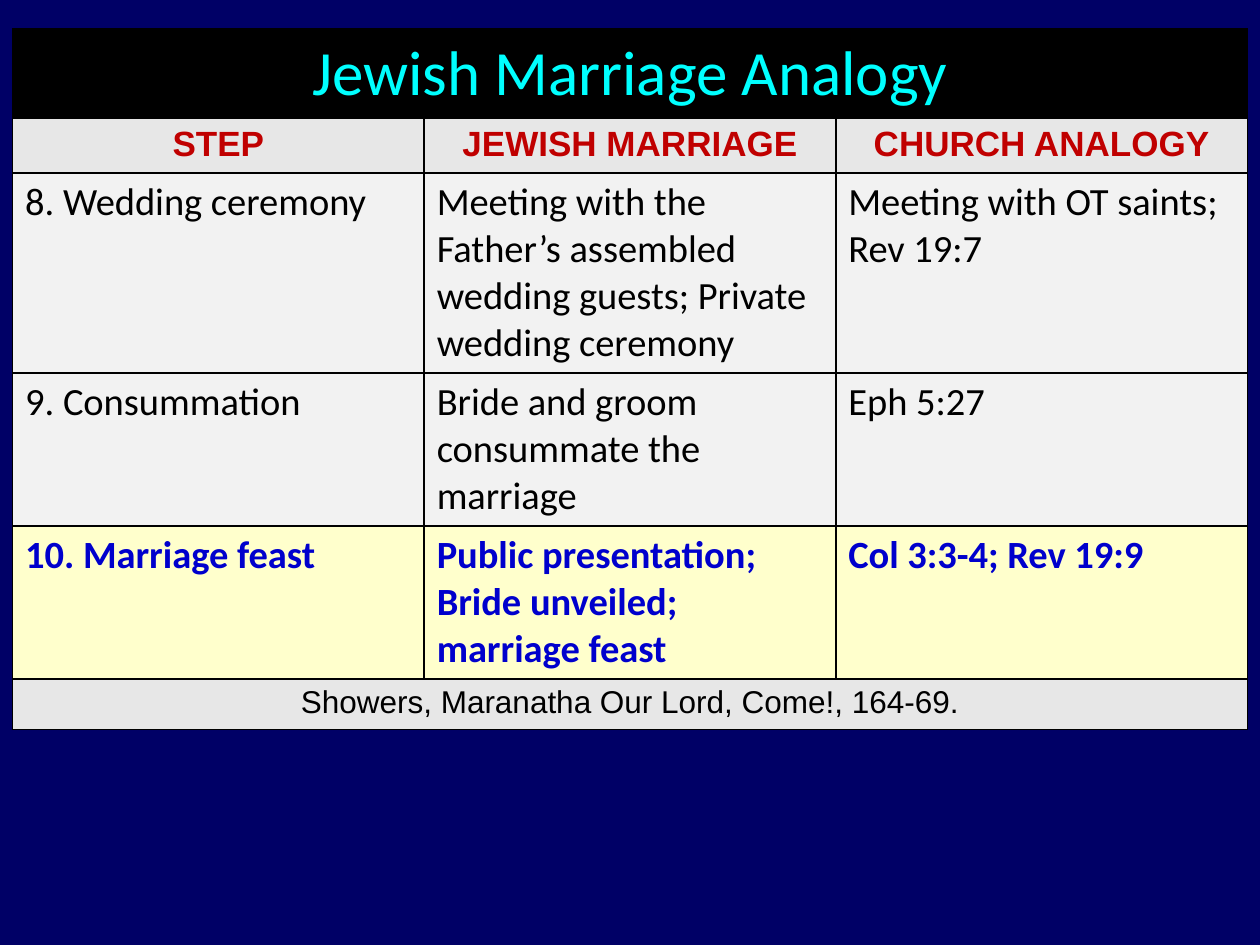
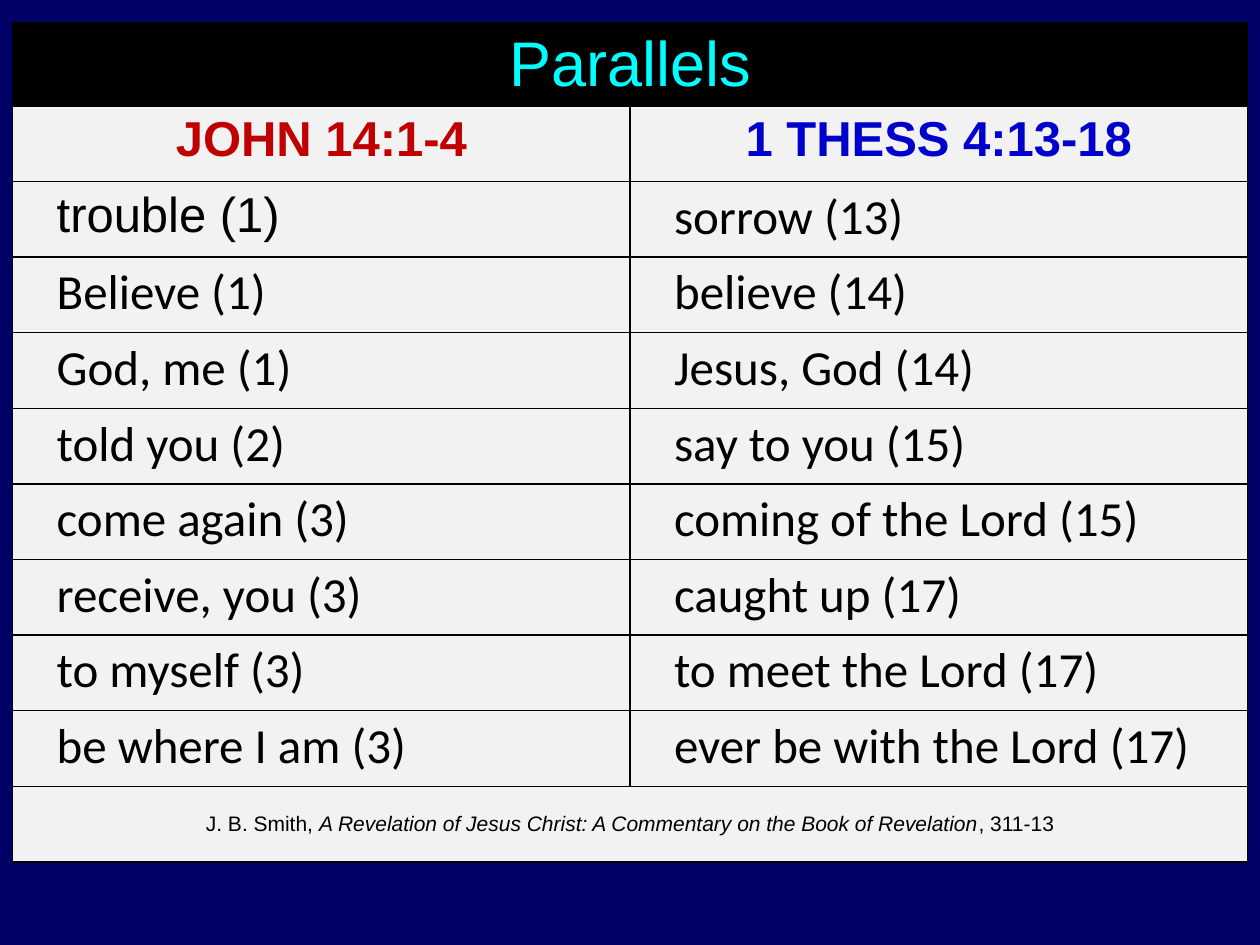
"""Build two slides of comparison tables on a navy background."""
from dataclasses import dataclass, replace

from lxml import etree
from pptx import Presentation
from pptx.dml.color import RGBColor
from pptx.enum.text import MSO_ANCHOR, PP_ALIGN
from pptx.oxml.ns import qn
from pptx.util import Inches, Pt

CENTER, LEFT = PP_ALIGN.CENTER, PP_ALIGN.LEFT
TOP, MIDDLE = MSO_ANCHOR.TOP, MSO_ANCHOR.MIDDLE
SLIDE_W, SLIDE_H, MARGIN = 10, 7.5, 0.1
NAVY, BLACK, CYAN = "000066", "000000", "00FFFF"
RED, BLUE = "C00000", "0000CC"
GREY, PALE, CREAM = "E7E7E7", "F2F2F2", "FFFFCC"


@dataclass(frozen=True)
class Style:
    size: int
    font: str
    color: str = BLACK
    fill: str = PALE
    bold: bool = False
    align: int = LEFT
    level: int = 0
    indent: float = 0
    anchor: int = TOP


@dataclass(frozen=True)
class Cell:
    text: str
    style: Style
    italic: str = ""
    tail: str = ""


@dataclass(frozen=True)
class Row:
    height: float
    cells: list[Cell]


TITLE = Style(36, "Calibri", CYAN, BLACK, align=CENTER)
HEAD = Style(20, "Arial", RED, GREY, bold=True, align=CENTER)
BODY = Style(22, "Calibri")
FEAST = replace(BODY, color=BLUE, fill=CREAM, bold=True)
SOURCE = Style(18, "Arial", fill=GREY, align=CENTER)
VERSE_HEAD = replace(HEAD, size=28, fill=PALE)
VERSE = replace(BODY, size=28, level=1, indent=0.25)
VERSE_SOURCE = replace(SOURCE, size=12, fill=PALE, anchor=MIDDLE)


def rgb(value: str) -> RGBColor:
    """Turn a hex string into a colour."""
    return RGBColor.from_string(value)


def row(height: float, style: Style, *texts: str) -> Row:
    """Make a row whose cells share one style."""
    return Row(height, [Cell(text, style) for text in texts])


def add_borders(cell) -> None:
    """Give a table cell a thin black line on each side."""
    tc_pr = cell._tc.get_or_add_tcPr()
    for side in ("lnL", "lnR", "lnT", "lnB"):
        ln = etree.SubElement(tc_pr, qn(f"a:{side}"), w=str(Pt(1)))
        fill = etree.SubElement(ln, qn("a:solidFill"))
        etree.SubElement(fill, qn("a:srgbClr"), val=BLACK)


def write_cell(cell, item: Cell) -> None:
    """Fill a table cell and set its text."""
    style = item.style
    cell.fill.solid()
    cell.fill.fore_color.rgb = rgb(style.fill)
    cell.vertical_anchor = style.anchor
    p = cell.text_frame.paragraphs[0]
    p.alignment, p.level = style.align, style.level
    if style.indent:
        p_pr = p._p.get_or_add_pPr()
        p_pr.set("marL", str(Inches(style.indent)))
        p_pr.set("indent", "0")
    p.font.size, p.font.name = Pt(style.size), style.font
    p.font.bold, p.font.color.rgb = style.bold, rgb(style.color)
    for text in filter(None, (item.text, item.italic, item.tail)):
        r = p.add_run()
        r.text = text
        if text == item.italic:
            r.font.italic = True


def add_table_slide(prs, top: float, columns: int, rows: list[Row]) -> None:
    """Add a slide with one full-width table; single-cell rows span it."""
    s = prs.slides.add_slide(prs.slide_layouts[6])
    s.background.fill.solid()
    s.background.fill.fore_color.rgb = rgb(NAVY)
    width = SLIDE_W - 2 * MARGIN
    height = sum(line.height for line in rows)
    sp = s.shapes.add_table(len(rows), columns, Inches(MARGIN), Inches(top),
                            Inches(width), Inches(height))
    table = sp.table
    table.first_row = table.horz_banding = False
    for column in table.columns:
        column.width = Inches(width / columns)
    for i, line in enumerate(rows):
        table.rows[i].height = Inches(line.height)
        for j in range(columns):
            add_borders(table.cell(i, j))
        if len(line.cells) == 1:
            table.cell(i, 0).merge(table.cell(i, columns - 1))
        for j, item in enumerate(line.cells):
            write_cell(table.cell(i, j), item)


def marriage_rows() -> list[Row]:
    """List the rows of the marriage analogy."""
    return [
        row(0.69, TITLE, "Jewish Marriage Analogy"),
        row(0.43, HEAD, "STEP", "JEWISH MARRIAGE", "CHURCH ANALOGY"),
        row(1.54, BODY, "8. Wedding ceremony",
            "Meeting with the Father’s assembled wedding guests; "
            "Private wedding ceremony",
            "Meeting with OT saints; Rev 19:7"),
        row(1.18, BODY, "9. Consummation",
            "Bride and groom consummate the marriage", "Eph 5:27"),
        row(1.18, FEAST, "10. Marriage feast",
            "Public presentation; Bride unveiled; marriage feast",
            "Col 3:3-4; Rev 19:9"),
        row(0.4, SOURCE, "Showers, Maranatha Our Lord, Come!, 164-69."),
    ]


def parallel_rows() -> list[Row]:
    """List the rows of the two parallel passages."""
    height = 0.6
    pairs = [
        ("Believe (1)", "believe (14)"),
        ("God, me (1)", "Jesus, God (14)"),
        ("told you (2)", "say to you (15)"),
        ("come again (3)", "coming of the Lord (15)"),
        ("receive, you (3)", "caught up (17)"),
        ("to myself (3)", "to meet the Lord (17)"),
        ("be where I am (3)", "ever be with the Lord (17)"),
    ]
    return [
        row(height, replace(TITLE, font="Arial"), "Parallels"),
        Row(height, [Cell("JOHN 14:1-4", VERSE_HEAD),
                     Cell("1 THESS 4:13-18", replace(VERSE_HEAD, color=BLUE))]),
        Row(height, [Cell("trouble (1)", replace(VERSE, font="Arial")),
                     Cell("sorrow (13)", VERSE)]),
        *(row(height, VERSE, *pair) for pair in pairs),
        Row(height, [Cell("J. B. Smith, ", VERSE_SOURCE,
                          "A Revelation of Jesus Christ: A Commentary on "
                          "the Book of Revelation", ", 311-13")]),
    ]


def main() -> None:
    """Build and save the presentation."""
    prs = Presentation()
    prs.slide_width, prs.slide_height = Inches(SLIDE_W), Inches(SLIDE_H)
    add_table_slide(prs, 0.23, 3, marriage_rows())
    add_table_slide(prs, 0.18, 2, parallel_rows())
    prs.save("out.pptx")


if __name__ == "__main__":
    main()
